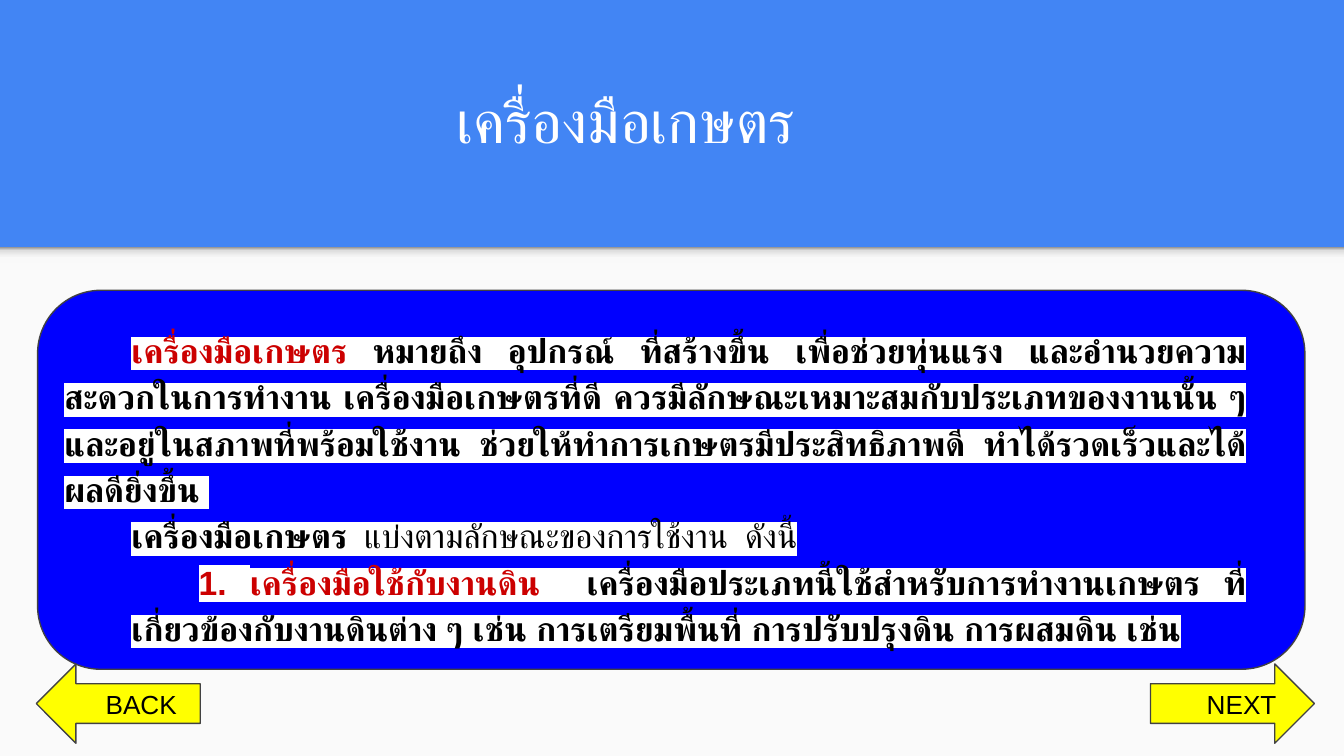
from copy import deepcopy

from lxml import etree
from pptx import Presentation
from pptx.dml.color import RGBColor
from pptx.enum.shapes import MSO_SHAPE
from pptx.enum.text import MSO_ANCHOR, PP_ALIGN
from pptx.oxml.ns import qn
from pptx.util import Inches, Pt

BLUE = RGBColor(0x42, 0x85, 0xF4)
PAPER = RGBColor(0xFA, 0xFA, 0xFA)
PANEL = RGBColor(0, 0, 0xFF)
YELLOW = RGBColor(0xFF, 0xFF, 0)
GREY = RGBColor(0x42, 0x42, 0x42)
RED = RGBColor(0xCC, 0, 0)
BLACK = RGBColor(0, 0, 0)
WHITE = RGBColor(0xFF, 0xFF, 0xFF)
SHADE = [(0, "F9F9F9"), (36, "F9F9F9"), (80, "DEDEDE"), (100, "999999")]

RECT = MSO_SHAPE.RECTANGLE
ROUND = MSO_SHAPE.ROUNDED_RECTANGLE
LEFT = MSO_SHAPE.LEFT_ARROW
RIGHT = MSO_SHAPE.RIGHT_ARROW
TOP, MIDDLE, BOTTOM = MSO_ANCHOR.TOP, MSO_ANCHOR.MIDDLE, MSO_ANCHOR.BOTTOM
START, JUSTIFY = PP_ALIGN.LEFT, PP_ALIGN.JUSTIFY

# Each paragraph: left margin, then runs of (text, colour, bold)
BODY = [
    (0, [
        ("เครื่องมือเกษตร", RED, True),
        (" หมายถึง อุปกรณ์ ที่สร้างขึ้น เพื่อช่วยทุ่นแรง และอำนวยความสะดวกในการทำงาน "
         "เครื่องมือเกษตรที่ดี ควรมีลักษณะเหมาะสมกับประเภทของงานนั้น ๆ "
         "และอยู่ในสภาพที่พร้อมใช้งาน ช่วยให้ทำการเกษตรมีประสิทธิภาพดี "
         "ทำได้รวดเร็วและได้ผลดียิ่งขึ้น ", BLACK, True),
    ]),
    (0, [
        ("เครื่องมือเกษตร", BLACK, True),
        ("  แบ่งตามลักษณะของการใช้งาน  ดังนี้", BLACK, False),
    ]),
    (0.5, [
        ("1. เครื่องมือใช้กับงานดิน", RED, True),
        ("  เครื่องมือประเภทนี้ใช้สำหรับการทำงานเกษตร ที่เกี่ยวข้องกับงานดินต่าง ๆ เช่น "
         "การเตรียมพื้นที่ การปรับปรุงดิน การผสมดิน เช่น", BLACK, True),
    ]),
]


def add_box(slide, kind, box, fill, line=None):
    shape = slide.shapes.add_shape(kind, *map(Inches, box))
    shape.shadow.inherit = False
    shape.fill.solid()
    shape.fill.fore_color.rgb = fill
    if line is None:
        shape.line.fill.background()
    else:
        shape.line.color.rgb = line
        shape.line.width = Pt(0.75)
    return shape


def set_frame(shape, anchor):
    frame = shape.text_frame
    frame.word_wrap = True
    frame.vertical_anchor = anchor
    frame.margin_left = frame.margin_right = Inches(0.1)
    frame.margin_top = frame.margin_bottom = Inches(0.1)
    return frame


def set_para(para, align, indent, margin=0):
    para.alignment = align
    props = para._p.get_or_add_pPr()
    props.set("marL", str(Inches(margin)))
    props.set("indent", str(Inches(indent)))


def add_run(para, text, size, font, color, bold=False, mark=None):
    run = para.add_run()
    run.text = text
    run.font.size = Pt(size)
    run.font.bold = bold
    run.font.color.rgb = color
    if mark is not None:
        light = etree.SubElement(run.font._element, qn("a:highlight"))
        etree.SubElement(light, qn("a:srgbClr"), val=str(mark))
    run.font.name = font


def add_paper(slide, box):
    x, y, w, h = box
    add_box(slide, RECT, box, PAPER)
    # Soft shade under the header
    shade = add_box(slide, RECT, (x, y, w, 0.12), PAPER)
    shade.fill.gradient()
    shade.fill.gradient_angle = 90
    stops = shade._element.spPr.find(".//" + qn("a:gsLst"))
    first = deepcopy(stops[0])
    for stop in list(stops):
        stops.remove(stop)
    for pos, color in SHADE:
        stop = deepcopy(first)
        stop.set("pos", str(pos * 1000))
        stop.remove(stop[0])
        etree.SubElement(stop, qn("a:srgbClr"), val=color)
        stops.append(stop)


def add_title(slide, box):
    shape = slide.shapes.add_textbox(*map(Inches, box))
    para = set_frame(shape, BOTTOM).paragraphs[0]
    set_para(para, START, 2.78)
    add_run(para, "เครื่องมือเกษตร", 32, "Roboto", WHITE)


def add_body(slide, box):
    x, y, w, h = box
    panel = add_box(slide, ROUND, box, PANEL, GREY)
    panel.adjustments[0] = 0.167
    place = (x + 0.1, y + 0.15, w - 0.44, h + 0.14)
    shape = slide.shapes.add_textbox(*map(Inches, place))
    frame = set_frame(shape, TOP)
    for i, (margin, runs) in enumerate(BODY):
        para = frame.add_paragraph() if i else frame.paragraphs[0]
        set_para(para, JUSTIFY, 0.5, margin)
        para.line_spacing = 1.15
        for text, color, bold in runs:
            add_run(para, text, 18, "Arial", color, bold, WHITE)


def add_arrow(slide, kind, box, text, indent):
    shape = add_box(slide, kind, box, YELLOW, GREY)
    para = set_frame(shape, MIDDLE).paragraphs[0]
    set_para(para, START, indent)
    add_run(para, text, 14, "Arial", BLACK)


def main():
    deck = Presentation()
    # Widescreen, 16 to 9
    deck.slide_width = Inches(10)
    deck.slide_height = Inches(10) * 9 // 16
    slide = deck.slides.add_slide(deck.slide_layouts[6])
    slide.background.fill.solid()
    slide.background.fill.fore_color.rgb = BLUE

    add_paper(slide, (0, 1.84, 10, 3.79))
    add_title(slide, (0.52, 0.42, 8.99, 0.84))
    add_body(slide, (0.28, 2.16, 9.43, 2.82))
    # Page arrows
    add_arrow(slide, LEFT, (0.27, 4.94, 1.22, 0.59), "BACK", 0.27)
    add_arrow(slide, RIGHT, (8.56, 4.94, 1.22, 0.59), "NEXT", 0.32)
    deck.save("out.pptx")


if __name__ == "__main__":
    main()
